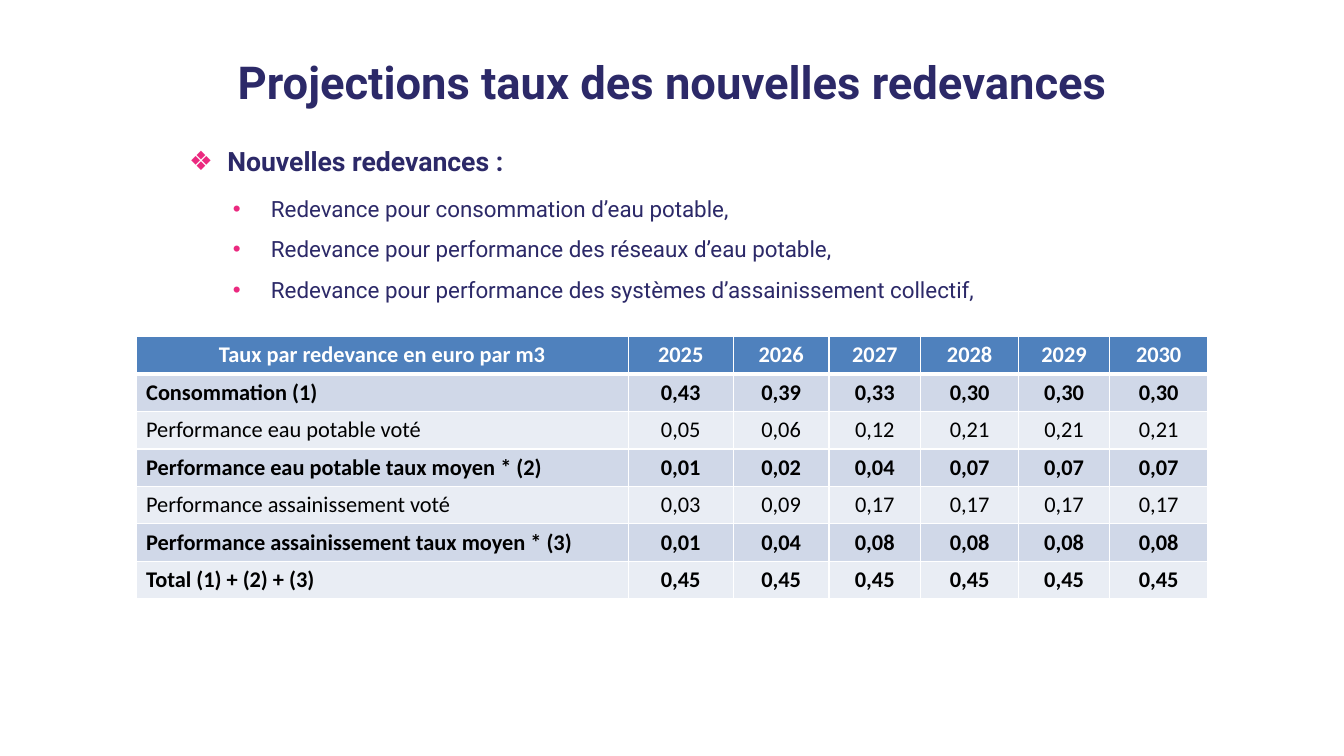
import dataclasses

import lxml.etree
import pptx
import pptx.dml.color
import pptx.enum.shapes
import pptx.enum.text
import pptx.oxml.ns
import pptx.util

Cm = pptx.util.Cm
Pt = pptx.util.Pt
ALIGN = pptx.enum.text.PP_ALIGN
ANCHOR = pptx.enum.text.MSO_ANCHOR


@dataclasses.dataclass(frozen=True)
class Theme:
    heading_font: str = "Roboto"
    table_font: str = "Calibri"
    navy: str = "2C2968"
    pink: str = "EB297F"
    white: str = "FFFFFF"
    black: str = "000000"
    header: str = "4F81BD"
    bands: tuple = ("D0D8E8", "E9EDF4")
    title_size: float = 32.4
    lead_size: float = 19
    body_size: float = 16
    line_spacing: float = 26
    thin_border: float = 1
    thick_border: float = 3


@dataclasses.dataclass(frozen=True)
class Box:
    """A region of the page, in centimetres."""
    left: float
    top: float
    width: float
    height: float

    def lengths(self):
        return Cm(self.left), Cm(self.top), Cm(self.width), Cm(self.height)


THEME = Theme()

TITLE = "Projections taux des nouvelles redevances"
LEAD = "Nouvelles redevances :"
FEES = (
    "Redevance pour consommation d’eau potable,",
    "Redevance pour performance des réseaux d’eau potable,",
    "Redevance pour performance des systèmes d’assainissement collectif,",
)
HANGING = 0.96
COLUMN_WIDTHS = (12.4, 2.65, 2.41, 2.31, 2.47, 2.29, 2.48)
HEADER = ("Taux par redevance en euro par m3", *map(str, range(2025, 2031)))
# Label, yearly rates, bold
RATES = (
    ("Consommation (1)", "0,43 0,39 0,33 0,30 0,30 0,30", True),
    ("Performance eau potable voté", "0,05 0,06 0,12 0,21 0,21 0,21", False),
    ("Performance eau potable taux moyen * (2)", "0,01 0,02 0,04 0,07 0,07 0,07", True),
    ("Performance assainissement voté", "0,03 0,09 0,17 0,17 0,17 0,17", False),
    ("Performance assainissement taux moyen * (3)", "0,01 0,04 0,08 0,08 0,08 0,08", True),
    ("Total (1) + (2) + (3)", "0,45 0,45 0,45 0,45 0,45 0,45", True),
)


def rgb(value):
    return pptx.dml.color.RGBColor.from_string(value)


def add_element(parent, tag, **attributes):
    element = lxml.etree.SubElement(parent, pptx.oxml.ns.qn(tag))
    for name, value in attributes.items():
        element.set(name, str(value))
    return element


def add_span(para, text, font, size, color, bold):
    span = para.add_run()
    span.text = text
    span.font.name = font
    span.font.size = Pt(size)
    span.font.bold = bold
    span.font.color.rgb = rgb(color)


def set_bullet(para, symbol, indent):
    properties = para._p.get_or_add_pPr()
    properties.set("marL", str(Cm(indent)))
    properties.set("indent", str(-Cm(HANGING)))
    color = add_element(properties, "a:buClr")
    add_element(color, "a:srgbClr", val=THEME.pink)
    add_element(properties, "a:buFont", typeface="Arial")
    add_element(properties, "a:buChar", char=symbol)


def set_borders(cell, top, bottom):
    properties = cell._tc.get_or_add_tcPr()
    thin = THEME.thin_border
    for side, width in (("L", thin), ("R", thin), ("T", top), ("B", bottom)):
        line = add_element(properties, f"a:ln{side}", w=Pt(width))
        fill = add_element(line, "a:solidFill")
        add_element(fill, "a:srgbClr", val=THEME.white)


# Title
def add_title(page, box):
    frame = page.shapes.add_textbox(*box.lengths()).text_frame
    frame.word_wrap = True
    frame.vertical_anchor = ANCHOR.MIDDLE
    para = frame.paragraphs[0]
    para.alignment = ALIGN.CENTER
    add_span(para, TITLE, THEME.heading_font, THEME.title_size, THEME.navy, True)


# Bulleted list of the new fees on a white panel
def add_fee_list(page, box):
    panel = page.shapes.add_shape(
        pptx.enum.shapes.MSO_SHAPE.RECTANGLE, *box.lengths())
    panel.shadow.inherit = False
    panel.fill.solid()
    panel.fill.fore_color.rgb = rgb(THEME.white)
    panel.line.fill.background()
    frame = panel.text_frame
    frame.word_wrap = True
    frame.vertical_anchor = ANCHOR.TOP
    entries = [(LEAD, "❖", HANGING, THEME.lead_size, True, 6)]
    entries += [(fee, "•", 2.06, THEME.body_size, False, 3) for fee in FEES]
    for index, (text, symbol, indent, size, bold, after) in enumerate(entries):
        para = frame.add_paragraph() if index else frame.paragraphs[0]
        para.level = 0 if bold else 1
        para.alignment = ALIGN.LEFT
        set_bullet(para, symbol, indent)
        para.line_spacing = Pt(THEME.line_spacing)
        para.space_after = Pt(after)
        add_span(para, text, THEME.heading_font, size, THEME.navy, bold)


# Table of rates by year
def add_rate_table(page, box):
    rows = [(HEADER, True)]
    rows += [((label, *rates.split()), bold) for label, rates, bold in RATES]
    table = page.shapes.add_table(len(rows), len(HEADER), *box.lengths()).table
    for column, width in zip(table.columns, COLUMN_WIDTHS):
        column.width = Cm(width)
    for row_index, (texts, bold) in enumerate(rows):
        table.rows[row_index].height = Cm(box.height / len(rows))
        is_header = row_index == 0
        background = THEME.header if is_header else THEME.bands[(row_index - 1) % 2]
        color = THEME.white if is_header else THEME.black
        top = THEME.thick_border if row_index == 1 else THEME.thin_border
        bottom = THEME.thick_border if is_header else THEME.thin_border
        for column_index, text in enumerate(texts):
            cell = table.cell(row_index, column_index)
            set_borders(cell, top, bottom)
            cell.fill.solid()
            cell.fill.fore_color.rgb = rgb(background)
            para = cell.text_frame.paragraphs[0]
            centred = is_header or column_index > 0
            para.alignment = ALIGN.CENTER if centred else ALIGN.LEFT
            add_span(para, text, THEME.table_font, THEME.body_size, color, bold)


def main():
    deck = pptx.Presentation()
    deck.slide_width, deck.slide_height = Cm(33.87), Cm(19.05)
    page = deck.slides.add_slide(deck.slide_layouts[6])
    add_fee_list(page, Box(4.52, 3.42, 25.73, 4.22))
    add_title(page, Box(4.24, 0.46, 25.4, 3.18))
    add_rate_table(page, Box(3.43, 8.48, 27.01, 6.61))
    deck.save("out.pptx")


if __name__ == "__main__":
    main()
